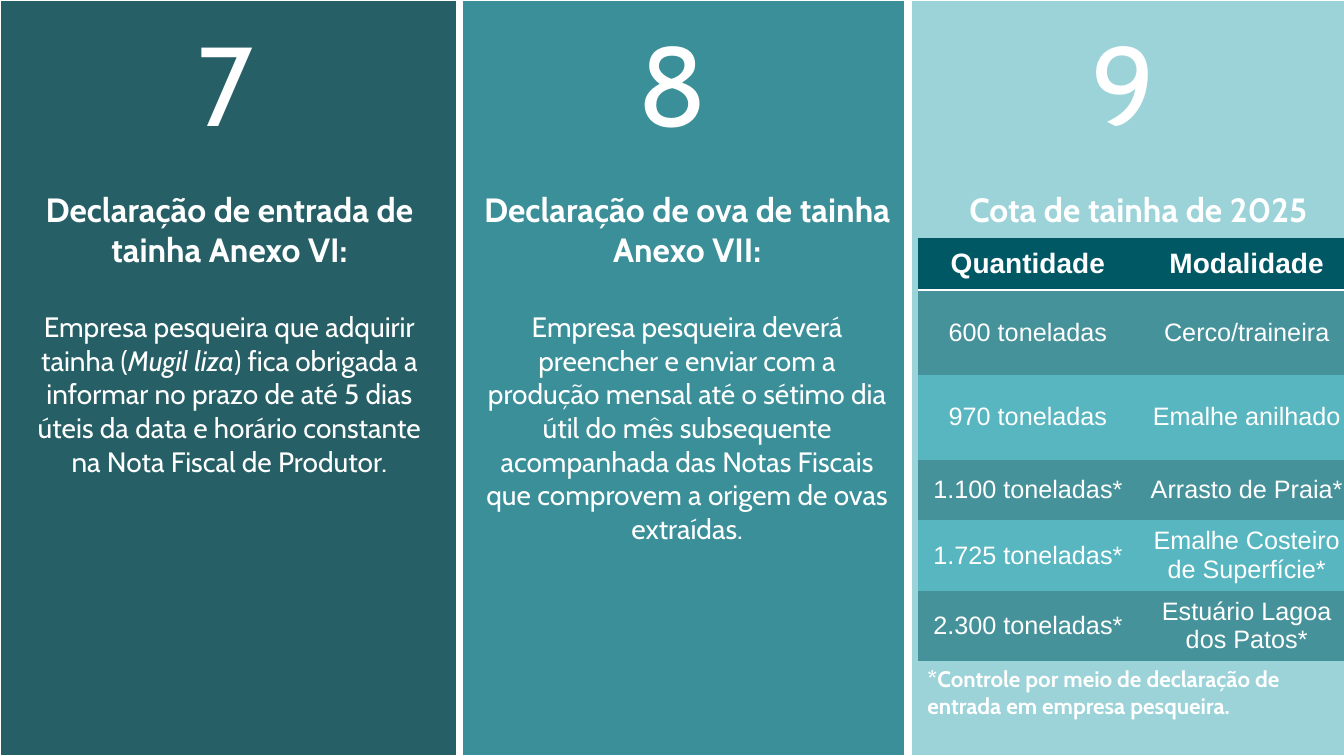
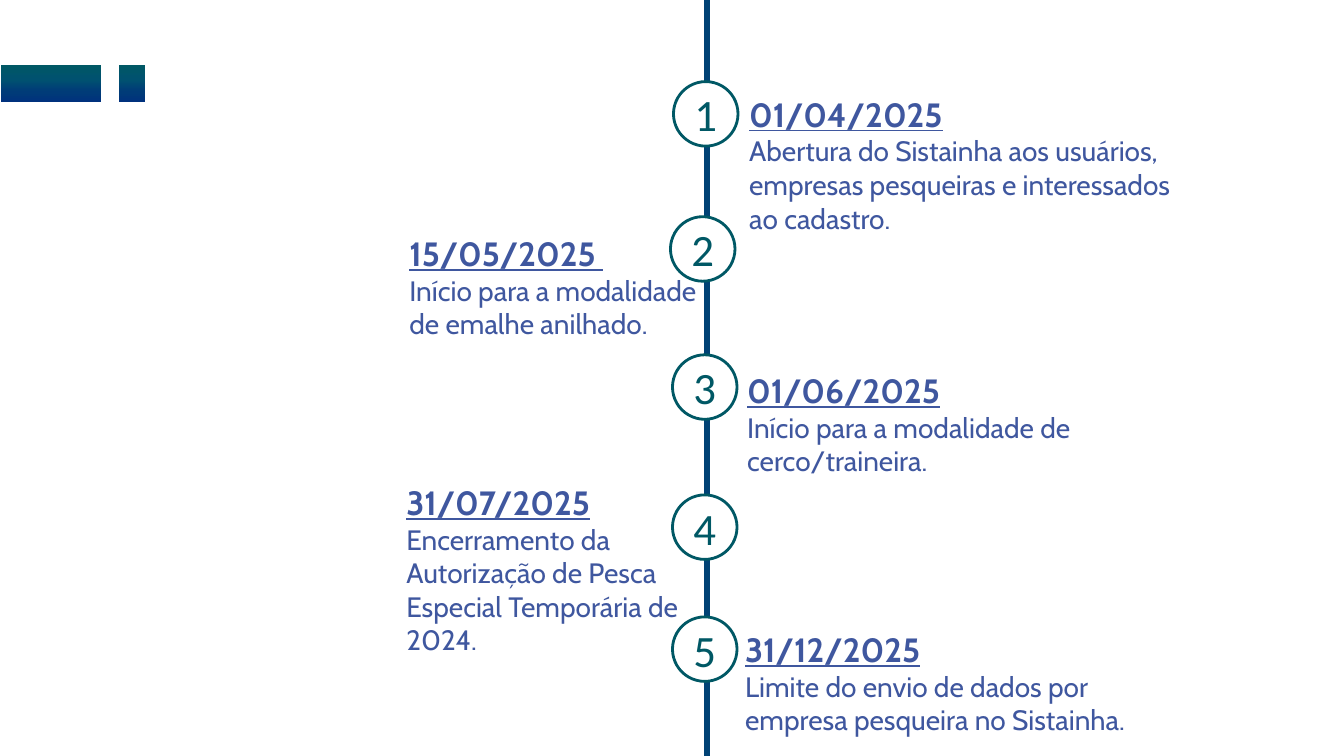
from dataclasses import dataclass

from lxml.etree import SubElement
from pptx import Presentation
from pptx.dml.color import RGBColor
from pptx.enum.shapes import MSO_CONNECTOR, MSO_SHAPE
from pptx.enum.text import MSO_ANCHOR as Anchor, MSO_AUTO_SIZE as AutoSize, PP_ALIGN as Align
from pptx.oxml.ns import qn
from pptx.util import Emu, Pt

PX = 9144
NO_TABLE_STYLE = "{2D5ABB26-0587-4C30-8999-92F81FD0307C}"


@dataclass(frozen=True)
class Theme:
    white: str = "FFFFFF"
    panels: tuple = ("266066", "3A8F98", "9BD3D9")
    teal: str = "005865"
    rows: tuple = ("46929A", "58B6C0")
    axis: str = "004275"
    ink: str = "3F579F"
    gradient: tuple = ((0, "005865"), (40, "005170"), (72, "003B78"), (100, "00317D"))
    font: str = "Cabin"
    table_font: str = "Arial"
    badge_font: str = "Calibri"
    number: int = 80
    badge: int = 32
    heading: int = 24
    body: int = 20
    cell: int = 18
    note: int = 16


T = Theme()

PANELS = [(0, 454, 186), (458, 440, 623), (903, 448, 1073)]

DECLARATIONS = [
    (15, 299, "Declaração de entrada de tainha Anexo VI:",
     [("Empresa pesqueira que adquirir tainha (", False), ("Mugil liza", True),
      (") fica obrigada a informar no prazo de até 5 dias úteis da data e horário "
       "constante na Nota Fiscal de Produtor.", False)]),
    (469, 367, "Declaração de ova de tainha Anexo VII:",
     [("Empresa pesqueira deverá preencher e enviar com a produção mensal até o sétimo dia "
       "útil do mês subsequente acompanhada das Notas Fiscais que comprovem a origem de "
       "ovas extraídas.", False)]),
]

QUOTAS = [
    (52, "Quantidade", "Modalidade"),
    (84, "600 toneladas", "Cerco/traineira"),
    (84, "970 toneladas", "Emalhe anilhado"),
    (60, "1.100 toneladas*", "Arrasto de Praia*"),
    (70, "1.725 toneladas*", "Emalhe Costeiro de Superfície*"),
    (70, "2.300 toneladas*", "Estuário Lagoa dos Patos*"),
]

EVENTS = [
    ((724, 88, 464, 151), "01/04/2025",
     "Abertura do Sistainha aos usuários, empresas pesqueiras e interessados ao cadastro."),
    ((387, 226, 319, 118), "15/05/2025 ", "Início para a modalidade de emalhe anilhado."),
    ((722, 362, 481, 118), "01/06/2025", "Início para a modalidade de cerco/traineira."),
    ((384, 473, 317, 185), "31/07/2025",
     "Encerramento da Autorização de Pesca Especial Temporária de 2024."),
    ((720, 619, 447, 118), "31/12/2025",
     "Limite do envio de dados por empresa pesqueira no Sistainha."),
]

BADGES = [(668, 81), (665, 215), (667, 352), (667, 491), (667, 612)]


def px(n):
    return Emu(n * PX)


def rgb(color):
    return RGBColor.from_string(color)


def write(p, text, size=T.body, color=T.white, font=T.font, bold=False, italic=False,
          underline=False, align=None):
    r = p.add_run()
    r.text = text
    f = r.font
    f.size, f.name, f.bold, f.italic, f.underline = Pt(size), font, bold, italic, underline
    f.color.rgb = rgb(color)
    if align is not None:
        p.alignment = align


def add_box(s, at):
    tf = s.shapes.add_textbox(*map(px, at)).text_frame
    tf.word_wrap = True
    return tf


def add_block(s, kind, at, fill=None, line=None, width=2):
    sp = s.shapes.add_shape(kind, *map(px, at))
    sp.shadow.inherit = False
    if fill:
        sp.fill.solid()
        sp.fill.fore_color.rgb = rgb(fill)
    if line:
        sp.line.color.rgb = rgb(line)
        sp.line.width = Pt(width)
    else:
        sp.line.fill.background()
    return sp


def add_gradient_bar(s, at):
    sp = add_block(s, MSO_SHAPE.RECTANGLE, at)
    sp.fill.gradient()
    sp.fill.gradient_angle = 270
    stops = sp._element.spPr.find(".//" + qn("a:gsLst"))
    stops.clear()
    for pos, color in T.gradient:
        gs = SubElement(stops, qn("a:gs"), pos=str(pos * 1000))
        SubElement(gs, qn("a:srgbClr"), val=color)


def place(s, ph, at):
    ph.left, ph.top, ph.width, ph.height = map(px, at)
    s.shapes._spTree.append(ph._element)
    tf = ph.text_frame
    tf.auto_size = AutoSize.NONE
    tf.vertical_anchor = Anchor.TOP
    return tf


def plain_paragraph(p):
    p.space_before = Pt(0)
    pPr = p._p.get_or_add_pPr()
    pPr.set("marL", "0")
    pPr.set("indent", "0")
    SubElement(pPr, qn("a:buNone"))


def fill_declaration(s, ph, left, height, heading, parts):
    tf = place(s, ph, (left, 182, 425, height))
    head, body = tf.paragraphs[0], tf.add_paragraph()
    for p in (head, body):
        plain_paragraph(p)
    head.space_after = Pt(29)
    write(head, heading, size=T.heading, bold=True, align=Align.CENTER)
    for text, italic in parts:
        write(body, text, italic=italic, align=Align.CENTER)


def underline_cell(cell):
    ln = SubElement(cell._tc.get_or_add_tcPr(), qn("a:lnB"), w=str(Pt(2)))
    SubElement(SubElement(ln, qn("a:solidFill")), qn("a:srgbClr"), val=T.white)


def add_quota_table(s, left, top, widths):
    height = sum(row[0] for row in QUOTAS)
    frame = s.shapes.add_table(len(QUOTAS), len(widths),
                               *map(px, (left, top, sum(widths), height)))
    table = frame.table
    table._tbl.tblPr.find(qn("a:tableStyleId")).text = NO_TABLE_STYLE
    for col, width in zip(table.columns, widths):
        col.width = px(width)
    for i, (row_height, *texts) in enumerate(QUOTAS):
        table.rows[i].height = px(row_height)
        header = i == 0
        for j, text in enumerate(texts):
            cell = table.cell(i, j)
            cell.vertical_anchor = Anchor.MIDDLE
            if header:
                underline_cell(cell)
            cell.fill.solid()
            cell.fill.fore_color.rgb = rgb(T.teal if header else T.rows[(i - 1) % 2])
            write(cell.text_frame.paragraphs[0], text, size=T.body if header else T.cell,
                  font=T.table_font, bold=header, align=Align.CENTER)


def add_event(s, at, date, text):
    tf = add_box(s, at)
    tf.margin_left = px(19)
    write(tf.paragraphs[0], date, size=T.heading, color=T.ink, bold=True, underline=True)
    write(tf.add_paragraph(), text, color=T.ink)


def add_badge(s, left, top, number):
    sp = add_block(s, MSO_SHAPE.OVAL, (left, top, 64, 64), T.white, T.teal)
    tf = sp.text_frame
    tf.word_wrap = False
    tf.margin_left = tf.margin_right = tf.margin_top = tf.margin_bottom = 0
    tf.vertical_anchor = Anchor.MIDDLE
    write(tf.paragraphs[0], str(number), size=T.badge, color=T.teal, font=T.badge_font,
          align=Align.CENTER)


def add_axis(s, x):
    line = s.shapes.add_connector(MSO_CONNECTOR.STRAIGHT, px(x), 0, px(x), px(750))
    line.line.color.rgb = rgb(T.axis)
    line.line.width = Pt(4.5)
    SubElement(line._element.spPr, qn("a:effectLst"))


def build_panels(prs):
    s = prs.slides.add_slide(prs.slide_layouts[3])
    title, *bodies = list(s.placeholders)
    for i, (left, width, number_left) in enumerate(PANELS):
        add_block(s, MSO_SHAPE.RECTANGLE, (left, 0, width, 750), T.panels[i], T.white)
        tf = add_box(s, (number_left, 9, 88, 145))
        write(tf.paragraphs[0], str(7 + i), size=T.number)
    for ph, declaration in zip(bodies, DECLARATIONS):
        fill_declaration(s, ph, *declaration)
    tf = place(s, title, (916, 182, 426, 91))
    write(tf.paragraphs[0], "Cota de tainha de 2025", size=T.heading, bold=True,
          align=Align.CENTER)
    add_quota_table(s, 910, 236, (219, 215))
    write(add_box(s, (910, 655, 375, 64)).paragraphs[0],
          "*Controle por meio de declaração de entrada em empresa pesqueira.",
          size=T.note, bold=True)


def build_timeline(prs):
    s = prs.slides.add_slide(prs.slide_layouts[6])
    add_axis(s, 701)
    for left, width in ((1, 99), (118, 26)):
        add_gradient_bar(s, (left, 65, width, 36))
    for event in EVENTS:
        add_event(s, *event)
    for number, (left, top) in enumerate(BADGES, 1):
        add_badge(s, left, top, number)


def main():
    prs = Presentation()
    prs.slide_width, prs.slide_height = px(1333), px(750)
    build_panels(prs)
    build_timeline(prs)
    prs.save("out.pptx")


if __name__ == "__main__":
    main()
